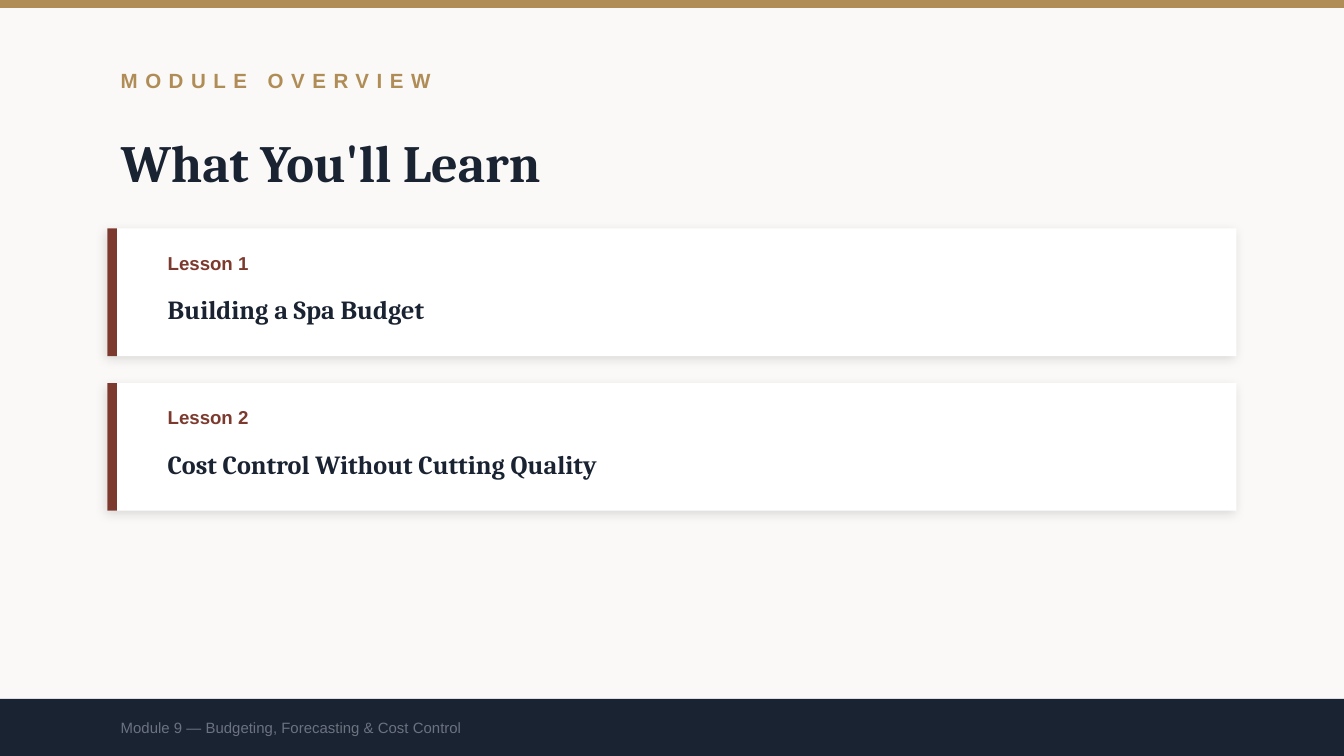
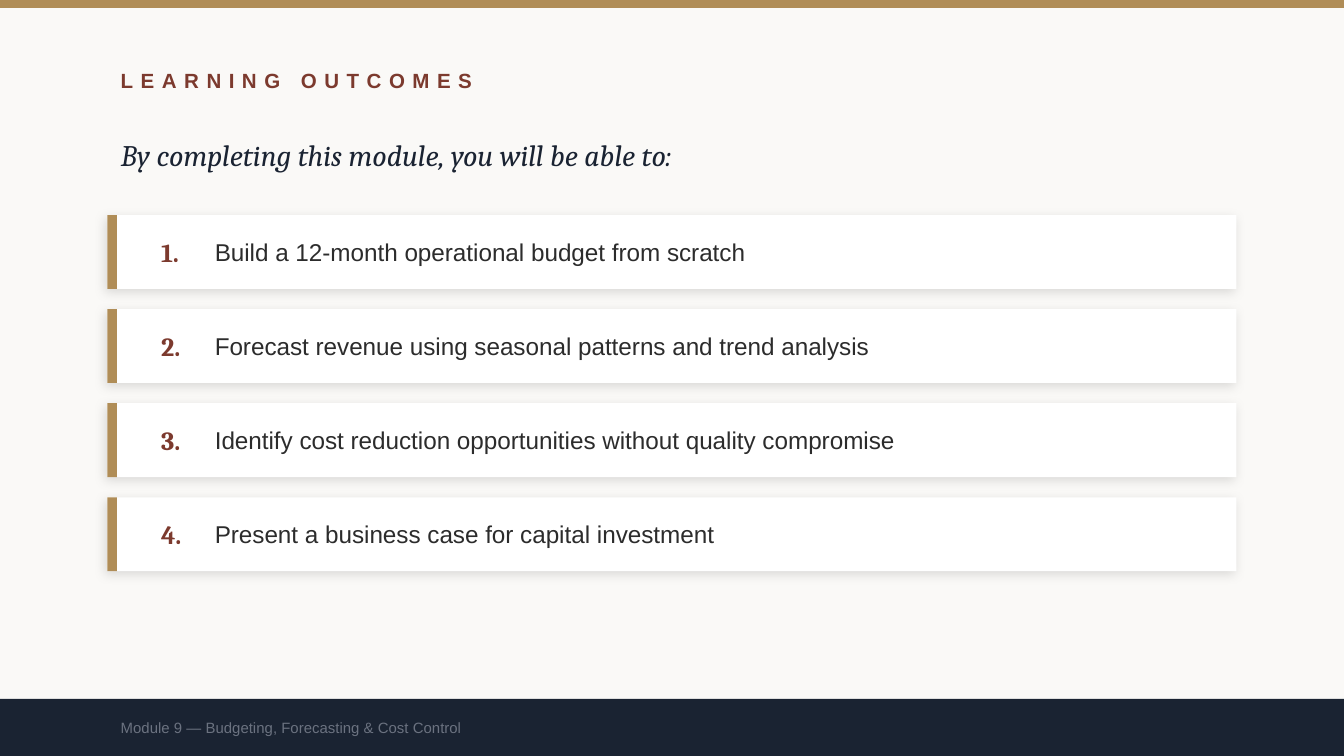
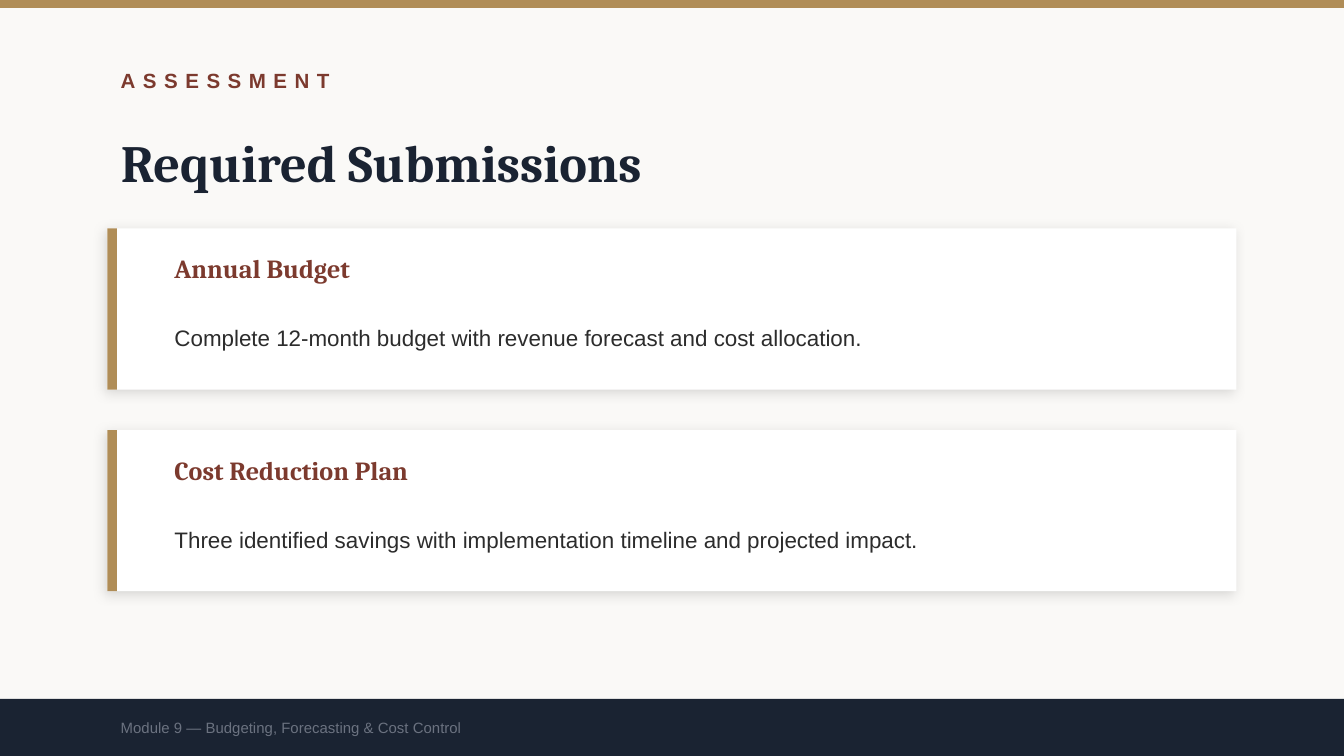
from lxml.etree import SubElement
from pptx import Presentation
from pptx.dml.color import RGBColor
from pptx.enum.shapes import MSO_SHAPE
from pptx.enum.text import MSO_ANCHOR, MSO_AUTO_SIZE, PP_ALIGN
from pptx.oxml.ns import qn
from pptx.util import Pt

PX = 4572
WIDE, HIGH = 2000, 1125
GOLD, RUST, NAVY = "B08D57", "7C3A2E", "1A2332"
PAPER, WHITE, INK, GREY = "FAF9F7", "FFFFFF", "2C2C2C", "6B7280"
FOOTER = "Module 9 — Budgeting, Forecasting & Cost Control"

STYLES = {
    "label": dict(font="Arial", size=11, bold=True, track=4),
    "title": dict(font="Cambria", size=28, color=NAVY, bold=True),
    "intro": dict(font="Cambria", size=16, color=NAVY, italic=True),
    "lesson": dict(font="Arial", size=10, color=RUST, bold=True),
    "topic": dict(font="Cambria", size=14, color=NAVY, bold=True),
    "head": dict(font="Cambria", size=14, color=RUST, bold=True),
    "goal": dict(font="Arial", size=13, color=INK),
    "detail": dict(font="Arial", size=12, color=INK, lead=1.4),
    "footer": dict(font="Arial", size=8, color=GREY),
}

SLIDES = [
    {
        "label": ("MODULE OVERVIEW", GOLD),
        "title": ("What You'll Learn", "title", 120),
        "cards": dict(top=340, high=190, gap=40, bar=RUST),
        "parts": [("lesson", 230, 16, 1400, 70), ("topic", 230, 80, 1560, 80)],
        "rows": [
            ("Lesson 1", "Building a Spa Budget"),
            ("Lesson 2", "Cost Control Without Cutting Quality"),
        ],
    },
    {
        "label": ("LEARNING OUTCOMES", RUST),
        "title": ("By completing this module, you will be able to:", "intro", 100),
        "cards": dict(top=320, high=110, gap=30, bar=GOLD),
        "parts": [("head", 220, 0, 80, 110), ("goal", 300, 0, 1480, 110)],
        "rows": [
            ("1.", "Build a 12-month operational budget from scratch"),
            ("2.", "Forecast revenue using seasonal patterns and trend analysis"),
            ("3.", "Identify cost reduction opportunities without quality compromise"),
            ("4.", "Present a business case for capital investment"),
        ],
    },
    {
        "label": ("ASSESSMENT", RUST),
        "title": ("Required Submissions", "title", 120),
        "cards": dict(top=340, high=240, gap=60, bar=GOLD),
        "parts": [("head", 240, 24, 1540, 70), ("detail", 240, 100, 1540, 110)],
        "rows": [
            ("Annual Budget",
             "Complete 12-month budget with revenue forecast and cost allocation."),
            ("Cost Reduction Plan",
             "Three identified savings with implementation timeline and projected impact."),
        ],
    },
]


def emu(*sizes):
    return [size * PX for size in sizes]


def paint(target, color):
    target.solid()
    target.fore_color.rgb = RGBColor.from_string(color)


def write(shape, text, font, size, color, bold=False, italic=False, track=0, lead=None):
    frame = shape.text_frame
    frame.word_wrap = True
    frame.auto_size = MSO_AUTO_SIZE.NONE
    frame.vertical_anchor = MSO_ANCHOR.MIDDLE
    para = frame.paragraphs[0]
    para.alignment = PP_ALIGN.LEFT
    if lead:
        para.line_spacing = lead
    run = para.add_run()
    run.text = text
    face = run.font
    face.name, face.size = font, Pt(size)
    face.bold, face.italic = bold, italic
    face.color.rgb = RGBColor.from_string(color)
    if track:
        run._r.get_or_add_rPr().set("spc", str(track * 100))


def add_text(slide, box, text, style, **extra):
    write(slide.shapes.add_textbox(*emu(*box)), text, **STYLES[style], **extra)


def add_rect(slide, box, color):
    rect = slide.shapes.add_shape(MSO_SHAPE.RECTANGLE, *emu(*box))
    rect.shadow.inherit = False
    paint(rect.fill, color)
    rect.line.fill.background()
    return rect


def add_shade(shape):
    effects = shape._element.spPr.find(qn("a:effectLst"))
    shade = SubElement(effects, qn("a:outerShdw"), blurRad=str(Pt(6)),
                       dist=str(Pt(2)), dir=str(135 * 60000),
                       algn="bl", rotWithShape="0")
    color = SubElement(shade, qn("a:srgbClr"), val="000000")
    SubElement(color, qn("a:alpha"), val="12000")


def add_cards(slide, parts, rows, top, high, gap, bar):
    for index, row in enumerate(rows):
        y = top + index * (high + gap)
        add_shade(add_rect(slide, (160, y, 1680, high), WHITE))
        add_rect(slide, (160, y, 14, high), bar)
        for text, (style, x, drop, wide, tall) in zip(row, parts):
            add_text(slide, (x, y + drop, wide, tall), text, style)


def add_slide(deck, data):
    slide = deck.slides.add_slide(deck.slide_layouts[5])
    paint(slide.background.fill, PAPER)
    add_rect(slide, (0, 0, WIDE, 12), GOLD)
    label, color = data["label"]
    add_text(slide, (160, 80, 1600, 80), label, "label", color=color)
    text, style, tall = data["title"]
    title = slide.shapes.title
    title.left, title.top, title.width, title.height = emu(160, 180, 1600, tall)
    write(title, text, **STYLES[style])
    add_cards(slide, data["parts"], data["rows"], **data["cards"])
    add_rect(slide, (0, 1040, WIDE, 85), NAVY)
    add_text(slide, (160, 1040, 1600, 85), FOOTER, "footer")


def main():
    deck = Presentation()
    deck.slide_width, deck.slide_height = emu(WIDE, HIGH)
    for data in SLIDES:
        add_slide(deck, data)
    deck.save("out.pptx")


if __name__ == "__main__":
    main()
